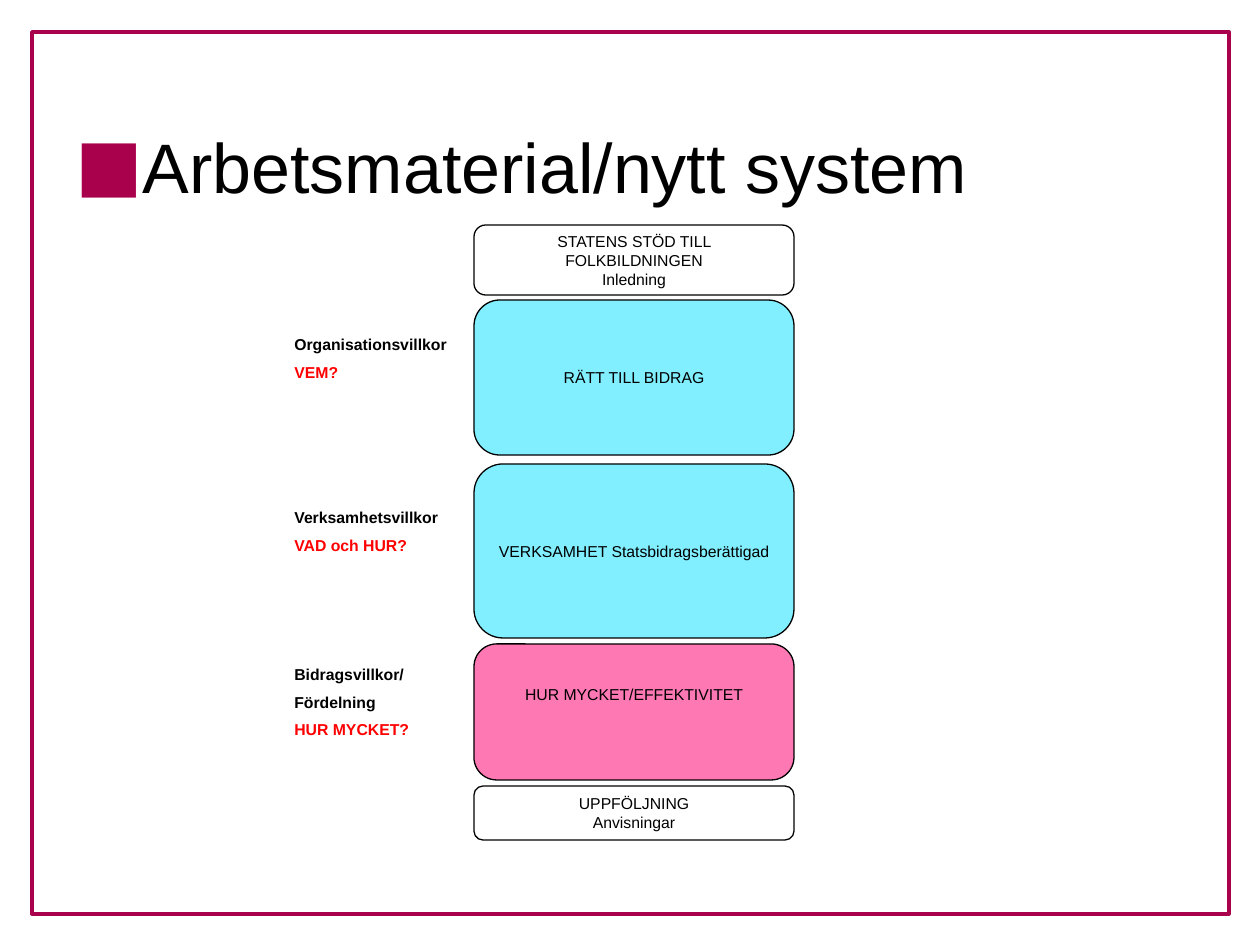
from lxml.etree import SubElement
from pptx import Presentation
from pptx.dml.color import RGBColor
from pptx.enum.shapes import MSO_SHAPE
from pptx.enum.text import MSO_ANCHOR, PP_ALIGN
from pptx.oxml.ns import qn
from pptx.util import Pt

PX = 914400 / 126
COLORS = {
    "black": "000000",
    "red": "FF0000",
    "wine": "AA014C",
    "cyan": "81EFFF",
    "pink": "FE78B4",
}


def px(n):
    return round(n * PX)


def rgb(name):
    return RGBColor.from_string(COLORS[name])


class Deck:
    font = "Arial"
    small = 9
    large = 40

    def __init__(self, width, height):
        self.prs = Presentation()
        self.prs.slide_width, self.prs.slide_height = px(width), px(height)
        self.s = self.prs.slides.add_slide(self.prs.slide_layouts[6])

    def run(self, p, text, size, color="black", bold=False):
        r = p.add_run()
        r.text = text
        r.font.name = self.font
        r.font.size = Pt(size)
        r.font.bold = bold
        r.font.color.rgb = rgb(color)

    def paragraph(self, tf, i):
        return tf.add_paragraph() if i else tf.paragraphs[0]

    def shape(self, kind, box, line, weight, fill=None):
        sp = self.s.shapes.add_shape(kind, *map(px, box))
        sp.shadow.inherit = False
        sp.line.color.rgb = rgb(line)
        sp.line.width = Pt(weight)
        if fill:
            sp.fill.solid()
            sp.fill.fore_color.rgb = rgb(fill)
        else:
            sp.fill.background()
        return sp

    def frame(self, box):
        self.shape(MSO_SHAPE.RECTANGLE, box, "wine", 2)

    def block(self, box, lines, fill=None, lift=0):
        sp = self.shape(MSO_SHAPE.ROUNDED_RECTANGLE, box, "black", 0.75, fill)
        sp.adjustments[0] = 0.167
        tf = sp.text_frame
        tf.word_wrap = True
        tf.vertical_anchor = MSO_ANCHOR.MIDDLE
        tf.margin_bottom = px(6 + 2 * lift)
        for i, text in enumerate(lines):
            p = self.paragraph(tf, i)
            p.alignment = PP_ALIGN.CENTER
            self.run(p, text, self.small)

    def text_box(self, box):
        tf = self.s.shapes.add_textbox(*map(px, box)).text_frame
        tf.word_wrap = True
        return tf

    def label(self, box, terms, question):
        tf = self.text_box(box)
        for i, text in enumerate([*terms, question]):
            p = self.paragraph(tf, i)
            if i:
                p.space_before = Pt(4.8)
            color = "red" if text == question else "black"
            self.run(p, text, self.small, color, bold=True)

    def title(self, box, text):
        tf = self.text_box(box)
        tf.vertical_anchor = MSO_ANCHOR.BOTTOM
        p = tf.paragraphs[0]
        pPr = p._p.get_or_add_pPr()
        clr = SubElement(pPr, qn("a:buClr"))
        SubElement(clr, qn("a:srgbClr"), val=COLORS["wine"])
        SubElement(pPr, qn("a:buSzPct"), val="160000")
        SubElement(pPr, qn("a:buFont"), typeface=self.font)
        SubElement(pPr, qn("a:buChar"), char="■")
        self.run(p, text, self.large)


def main():
    deck = Deck(1260, 945)
    deck.frame((32, 32, 1197, 882))
    deck.title((63, 38, 1134, 176), "Arbetsmaterial/nytt system")

    blocks = [
        (225, 70, ["STATENS STÖD TILL FOLKBILDNINGEN", "Inledning"], None, 0),
        (300, 155, ["RÄTT TILL BIDRAG"], "cyan", 0),
        (464, 174, ["VERKSAMHET Statsbidragsberättigad"], "cyan", 0),
        (644, 136, ["HUR MYCKET/EFFEKTIVITET"], "pink", 18),
        (786, 54, ["UPPFÖLJNING", "Anvisningar"], None, 0),
    ]
    for top, height, lines, fill, lift in blocks:
        deck.block((474, top, 320, height), lines, fill, lift)

    labels = [
        (329, 192, 60, ["Organisationsvillkor"], "VEM?"),
        (502, 229, 90, ["Verksamhetsvillkor"], "VAD och HUR?"),
        (659, 151, 90, ["Bidragsvillkor/", "Fördelning"], "HUR MYCKET?"),
    ]
    for top, width, height, terms, question in labels:
        deck.label((282, top, width, height), terms, question)

    deck.prs.save("out.pptx")


if __name__ == "__main__":
    main()
